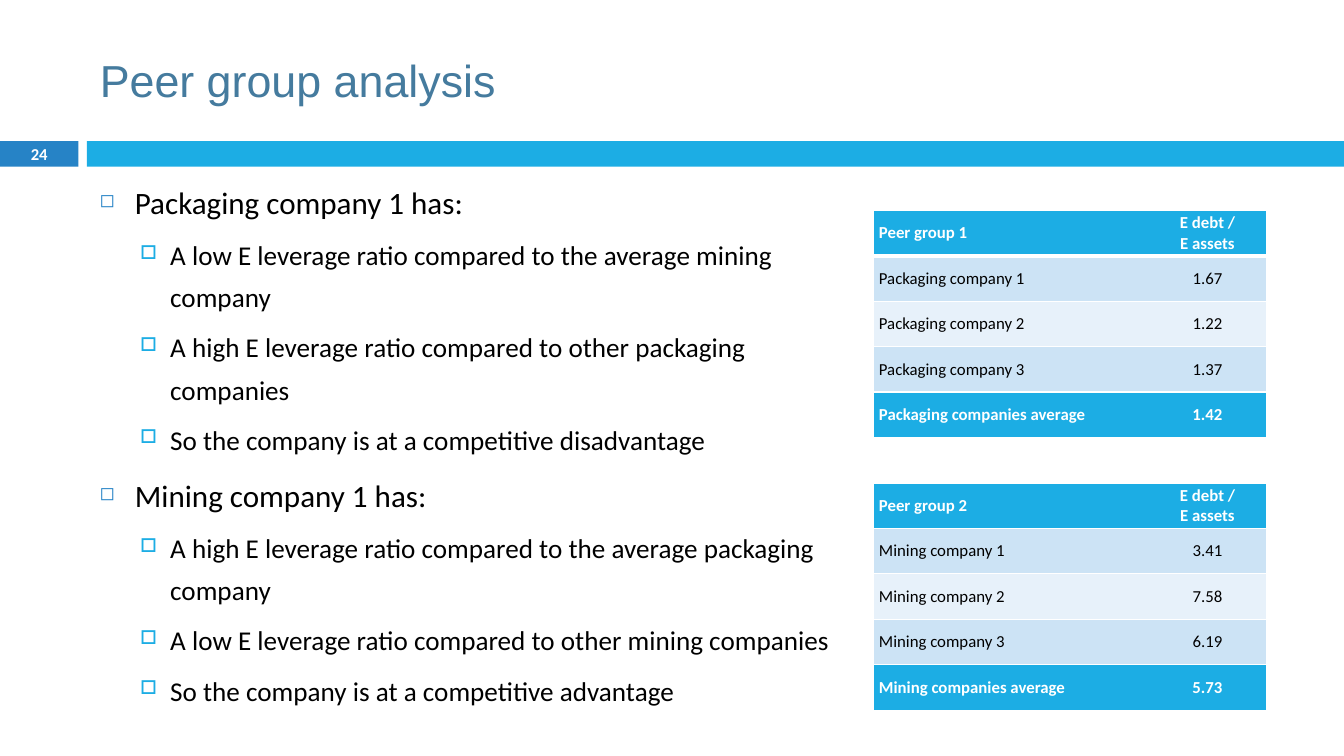
from dataclasses import dataclass

from lxml.etree import SubElement
from pptx import Presentation
from pptx.dml.color import RGBColor
from pptx.enum.shapes import MSO_SHAPE
from pptx.enum.text import MSO_ANCHOR, PP_ALIGN
from pptx.oxml.ns import qn
from pptx.util import Cm, Pt


@dataclass(frozen=True)
class Theme:
    heading_font: str = "Arial"
    body_font: str = "Calibri"
    heading: str = "457B9E"
    dark: str = "2683C6"
    accent: str = "1CADE4"
    white: str = "FFFFFF"
    black: str = "000000"
    bands: tuple = ("CCE3F5", "E7F1FA")
    title_size: float = 32
    number_size: float = 11.9
    point_sizes: tuple = (22.2, 19.4)
    table_size: float = 12


THEME = Theme()

# Text, left indent, hanging indent, space before, bullet, bullet colour, bullet size
LEVELS = (
    dict(indent=Cm(0.89), hanging=Cm(0.89), before=7, bullet="◻", tint=THEME.dark, percent=60),
    dict(indent=Cm(1.78), hanging=Cm(0.76), before=5.5, bullet="□", tint=THEME.accent, percent=70),
)

POINTS = (
    (0, "Packaging company 1 has:"),
    (1, "A low E leverage ratio compared to the average mining company"),
    (1, "A high E leverage ratio compared to other packaging companies"),
    (1, "So the company is at a competitive disadvantage"),
    (0, "Mining company 1 has:"),
    (1, "A high E leverage ratio compared to the average packaging company"),
    (1, "A low E leverage ratio compared to other mining companies"),
    (1, "So the company is at a competitive advantage"),
)

PEER_GROUPS = (
    ("Peer group 1", "Packaging company", "Packaging companies average",
     ("1.67", "1.22", "1.37"), "1.42"),
    ("Peer group 2", "Mining company", "Mining companies average",
     ("3.41", "7.58", "6.19"), "5.73"),
)


def write(para, text, *, size, color, font=THEME.body_font, bold=False,
          align=PP_ALIGN.LEFT, before=0, after=0, spacing=1.0):
    para.text = text
    para.alignment = align
    para.space_before, para.space_after = Pt(before), Pt(after)
    para.line_spacing = spacing
    for span in para.runs:
        span.font.name, span.font.size, span.font.bold = font, Pt(size), bold
        span.font.color.rgb = RGBColor.from_string(color)


def add_bar(page, left, width, color):
    bar = page.shapes.add_shape(MSO_SHAPE.RECTANGLE, left, Cm(3.56), width, Cm(0.64))
    bar.shadow.inherit = False
    bar.fill.solid()
    bar.fill.fore_color.rgb = RGBColor.from_string(color)
    bar.line.fill.background()
    return bar


def add_title(page, text):
    title = page.shapes.title
    title.left, title.top, title.width, title.height = Cm(2.26), Cm(0.64), Cm(30.2), Cm(2.74)
    title.text_frame.vertical_anchor = MSO_ANCHOR.MIDDLE
    write(title.text_frame.paragraphs[0], text, size=THEME.title_size,
          color=THEME.heading, font=THEME.heading_font)


def set_bullet(para, indent, hanging, bullet, tint, percent):
    properties = para._p.get_or_add_pPr()
    properties.set("marL", str(indent))
    properties.set("indent", str(-hanging))
    SubElement(SubElement(properties, qn("a:buClr")), qn("a:srgbClr"), val=tint)
    SubElement(properties, qn("a:buSzPct"), val=str(percent * 1000))
    SubElement(properties, qn("a:buChar"), char=bullet)


def add_points(page, points):
    box = page.shapes.add_textbox(Cm(2.26), Cm(4.22), Cm(19.46), Cm(13.69))
    frame = box.text_frame
    frame.word_wrap = True
    for index, (level, text) in enumerate(points):
        para = frame.add_paragraph() if index else frame.paragraphs[0]
        style = dict(LEVELS[level])
        para.level = level
        write(para, text, size=THEME.point_sizes[level], color=THEME.black,
              before=style.pop("before"), spacing=1.3)
        set_bullet(para, **style)


def set_borders(cell, bottom):
    """Rule the cell in white above and below, with open sides."""
    properties = cell._tc.get_or_add_tcPr()
    for side, width in (("L", 0), ("R", 0), ("T", 1), ("B", bottom)):
        line = SubElement(properties, qn(f"a:ln{side}"), w=str(Pt(width)))
        if width:
            SubElement(SubElement(line, qn("a:solidFill")), qn("a:srgbClr"), val=THEME.white)
        else:
            SubElement(line, qn("a:noFill"))


def fill_cell(cell, text, fill, bottom=1, **text_format):
    cell.margin_left = cell.margin_right = Cm(0.12)
    cell.margin_top = cell.margin_bottom = 0
    cell.vertical_anchor = MSO_ANCHOR.MIDDLE
    set_borders(cell, bottom)
    cell.fill.solid()
    cell.fill.fore_color.rgb = RGBColor.from_string(fill)
    write(cell.text_frame.paragraphs[0], text, size=THEME.table_size, **text_format)


def table_rows(groups):
    """List each row as its two texts, its fill and its text format."""
    strong = dict(color=THEME.white, bold=True)
    rows = []
    for heading, company, average_label, ratios, average in groups:
        if rows:
            rows.append((("", ""), THEME.white, dict(color=THEME.black)))
        rows.append(((heading, "E debt /\vE assets"), THEME.accent,
                     dict(strong, before=3, after=3, bottom=1 if rows else 3)))
        for index, ratio in enumerate(ratios):
            rows.append(((f"{company} {index + 1}", ratio), THEME.bands[index % 2],
                         dict(color=THEME.black, before=2, after=2)))
        rows.append(((average_label, average), THEME.accent, dict(strong, before=2, after=2)))
    return rows


def add_peer_table(page, groups):
    rows = table_rows(groups)
    table = page.shapes.add_table(len(rows), 2, Cm(22.03), Cm(5.3), Cm(9.87), Cm(12.6)).table
    table.first_row = table.horz_banding = False
    for column, width in zip(table.columns, (Cm(6.93), Cm(2.94))):
        column.width = width
    for row_index, (texts, fill, row_format) in enumerate(rows):
        for column_index, align in enumerate((PP_ALIGN.LEFT, PP_ALIGN.CENTER)):
            fill_cell(table.cell(row_index, column_index), texts[column_index], fill,
                      align=align, **row_format)


def main():
    deck = Presentation()
    deck.slide_width, deck.slide_height = Cm(33.87), Cm(19.05)
    page = deck.slides.add_slide(deck.slide_layouts[5])
    number_bar = add_bar(page, 0, Cm(1.98), THEME.dark)
    number_bar.text_frame.margin_top = number_bar.text_frame.margin_bottom = 0
    number_bar.text_frame.vertical_anchor = MSO_ANCHOR.MIDDLE
    write(number_bar.text_frame.paragraphs[0], "24", size=THEME.number_size,
          color=THEME.white, bold=True, align=PP_ALIGN.CENTER)
    add_bar(page, Cm(2.19), Cm(31.68), THEME.accent)
    add_title(page, "Peer group analysis")
    add_points(page, POINTS)
    add_peer_table(page, PEER_GROUPS)
    deck.save("out.pptx")


if __name__ == "__main__":
    main()
